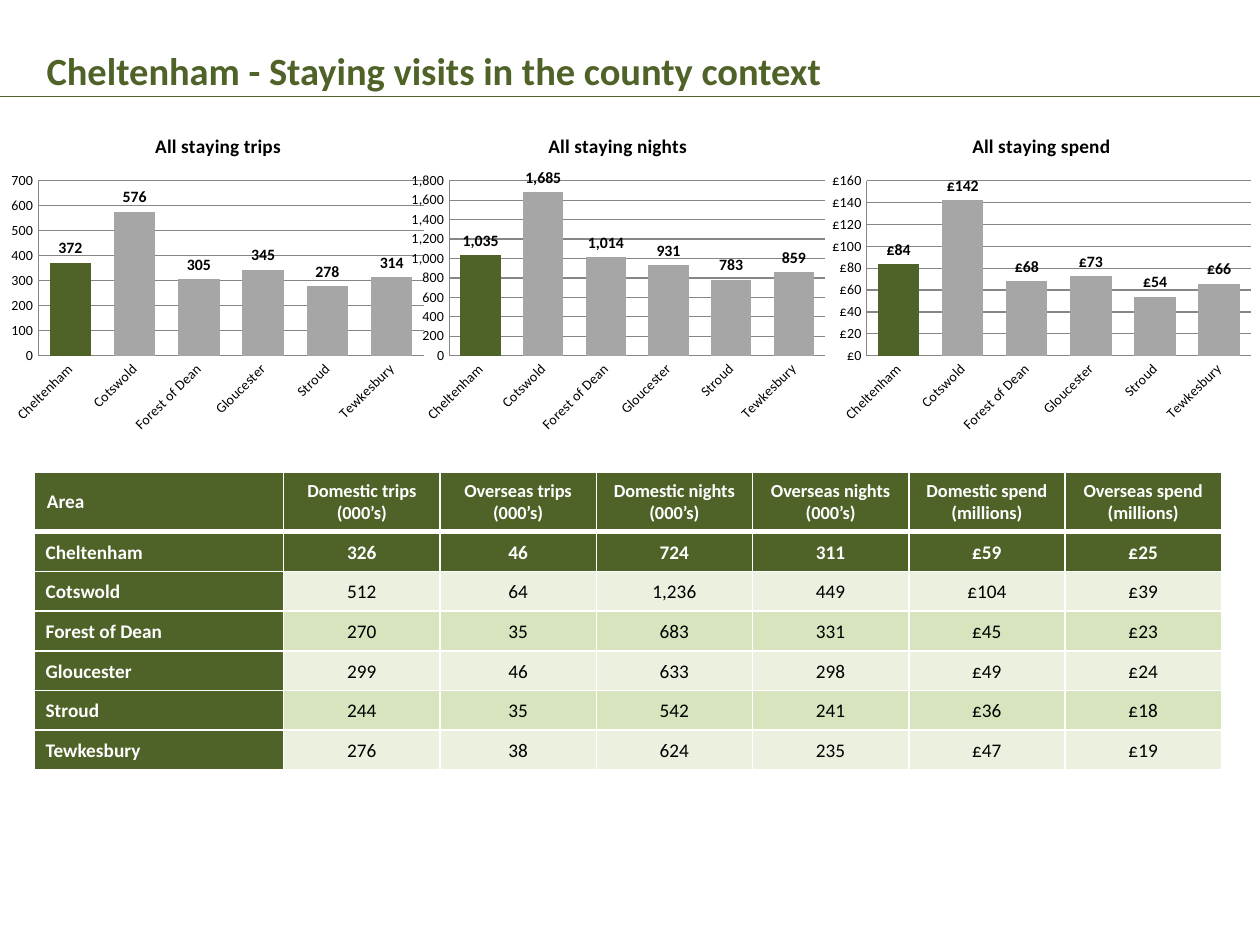
import dataclasses

import lxml.etree
import pptx
import pptx.chart.data
import pptx.dml.color
import pptx.enum.chart
import pptx.enum.shapes
import pptx.enum.text
import pptx.oxml
import pptx.oxml.ns
import pptx.util

Cm = pptx.util.Cm
Pt = pptx.util.Pt
qn = pptx.oxml.ns.qn


@dataclasses.dataclass(frozen=True)
class Theme:
    font: str = "Calibri"
    green: str = "4F6228"
    pale: str = "EBF1DE"
    mid: str = "D7E4BD"
    grey: str = "A6A6A6"
    rule: str = "868686"
    white: str = "FFFFFF"
    black: str = "000000"
    title: float = 22
    body: float = 11
    head: float = 10.5
    label: float = 9
    tick: float = 8


AREAS = ["Cheltenham", "Cotswold", "Forest of Dean",
         "Gloucester", "Stroud", "Tewkesbury"]
HEADS = ["Area", "Domestic trips (000’s)", "Overseas trips (000’s)",
         "Domestic nights\n(000’s)", "Overseas nights\n(000’s)",
         "Domestic spend\n(millions)", "Overseas spend\n(millions)"]
VISITS = [
    ["326", "46", "724", "311", "£59", "£25"],
    ["512", "64", "1,236", "449", "£104", "£39"],
    ["270", "35", "683", "331", "£45", "£23"],
    ["299", "46", "633", "298", "£49", "£24"],
    ["244", "35", "542", "241", "£36", "£18"],
    ["276", "38", "624", "235", "£47", "£19"],
]
# title, values, number format, axis top, axis step, left, width, plot x, plot w
CHARTS = [
    ("All staying trips", [372, 576, 305, 345, 279 - 1, 314], "0",
     700, 100, 0.08, 8.64, 0.08, 0.9),
    ("All staying nights", [1035, 1685, 1014, 931, 783, 859], "#,##0",
     1800, 200, 8.1, 8.71, 0.11, 0.87),
    ("All staying spend", [84, 142, 68, 73, 54, 66], '"£"#,##0',
     160, 20, 16.59, 8.81, 0.1, 0.88),
]
CHARTS[0][1][4] = 278


def rgb(code):
    return pptx.dml.color.RGBColor.from_string(code)


class Deck:
    def __init__(self, theme):
        self.theme = theme
        self.file = pptx.Presentation()
        self.file.slide_width, self.file.slide_height = Cm(25.4), Cm(19.05)
        self.slide = self.file.slides.add_slide(self.file.slide_layouts[6])

    def style(self, font, size, color, bold=False):
        font.name, font.size, font.bold = self.theme.font, Pt(size), bold
        font.color.rgb = rgb(color)

    def title(self, text, left, top, width, height):
        box = self.slide.shapes.add_textbox(Cm(left), Cm(top), Cm(width), Cm(height))
        frame = box.text_frame
        frame.word_wrap = True
        frame.text = text
        para = frame.paragraphs[0]
        para.line_spacing = 1.2
        self.style(para.runs[0].font, self.theme.title, self.theme.green, True)

    def rule(self, top):
        line = self.slide.shapes.add_connector(
            pptx.enum.shapes.MSO_CONNECTOR.STRAIGHT,
            0, Cm(top), self.file.slide_width, Cm(top))
        line.line.color.rgb = rgb(self.theme.green)
        line.line.width = Pt(0.75)
        lxml.etree.SubElement(line.element.spPr, qn("a:effectLst"))

    def border(self, cell, row):
        """White cell edges, thicker between the header and the body."""
        props = cell._tc.get_or_add_tcPr()
        for side in "LRTB":
            thick = (row, side) in ((0, "B"), (1, "T"))
            edge = lxml.etree.SubElement(
                props, qn(f"a:ln{side}"), w=str(Pt(3 if thick else 1)))
            fill = lxml.etree.SubElement(edge, qn("a:solidFill"))
            lxml.etree.SubElement(fill, qn("a:srgbClr"), val=self.theme.white)

    def cell(self, cell, text, row, col):
        look = self.theme
        strong = row < 2 or col == 0
        self.border(cell, row)
        cell.fill.solid()
        cell.fill.fore_color.rgb = rgb(
            look.green if strong else (look.pale, look.mid)[row % 2])
        cell.vertical_anchor = pptx.enum.text.MSO_ANCHOR.MIDDLE
        if row:
            cell.margin_left = Cm(0.03 if col else 0.23)
            cell.margin_top = cell.margin_right = Cm(0.03)
            cell.margin_bottom = 0
        cell.text_frame.text = text
        size = look.head if row == 0 and col else look.body
        for para in cell.text_frame.paragraphs:
            if col:
                para.alignment = pptx.enum.text.PP_ALIGN.CENTER
            self.style(para.runs[0].font, size,
                       look.white if strong else look.black, strong)

    def table(self, rows, left, top, widths, heights):
        grid = self.slide.shapes.add_table(
            len(rows), len(widths), Cm(left), Cm(top),
            Cm(sum(widths)), Cm(sum(heights))).table
        for col, width in zip(grid.columns, widths):
            col.width = Cm(width)
        for line, height in zip(grid.rows, heights):
            line.height = Cm(height)
        for r, texts in enumerate(rows):
            for c, text in enumerate(texts):
                self.cell(grid.cell(r, c), text, r, c)

    def axis(self, axis):
        axis.major_tick_mark = pptx.enum.chart.XL_TICK_MARK.NONE
        axis.minor_tick_mark = pptx.enum.chart.XL_TICK_MARK.NONE
        axis.format.line.color.rgb = rgb(self.theme.rule)
        self.style(axis.tick_labels.font, self.theme.tick, self.theme.black)

    def place(self, chart, **parts):
        """Fix the inner plot area as shares of the chart, and slant the areas."""
        root = chart.element
        plot = root.find(".//" + qn("c:plotArea"))
        for old in plot.findall(qn("c:layout")):
            plot.remove(old)
        layout = lxml.etree.Element(qn("c:layout"))
        plot.insert(0, layout)
        manual = lxml.etree.SubElement(layout, qn("c:manualLayout"))
        values = {"layoutTarget": "inner", "xMode": "edge", "yMode": "edge", **parts}
        for name, value in values.items():
            lxml.etree.SubElement(manual, qn(f"c:{name}"), val=str(value))
        body = plot.find(f"{qn('c:catAx')}/{qn('c:txPr')}/{qn('a:bodyPr')}")
        body.set("rot", "-2700000")
        body.set("vert", "horz")

    def chart(self, name, values, form, peak, step, left, width, x, w):
        look = self.theme
        data = pptx.chart.data.CategoryChartData(number_format=form)
        data.categories = AREAS
        data.add_series("Series 1", values)
        chart = self.slide.shapes.add_chart(
            pptx.enum.chart.XL_CHART_TYPE.COLUMN_CLUSTERED,
            Cm(left), Cm(2.34), Cm(width), Cm(6.53), data).chart
        self.style(chart.font, 18, look.black)
        chart.has_legend = False
        chart.has_title = True
        chart.chart_title.include_in_layout = False
        frame = chart.chart_title.text_frame
        frame.text = name
        self.style(frame.paragraphs[0].runs[0].font, look.body, look.black, True)

        self.axis(chart.category_axis)
        scale = chart.value_axis
        self.axis(scale)
        scale.minimum_scale, scale.maximum_scale, scale.major_unit = 0, peak, step
        scale.tick_labels.number_format = form
        scale.tick_labels.number_format_is_linked = False
        scale.major_gridlines.format.line.color.rgb = rgb(look.rule)

        plot = chart.plots[0]
        plot.gap_width = 55
        plot.vary_by_categories = False
        bars = plot.series[0]
        for item, color in ((bars, look.grey), (bars.points[0], look.green)):
            item.format.fill.solid()
            item.format.fill.fore_color.rgb = rgb(color)
        labels = bars.data_labels
        labels.show_value = True
        labels.number_format = form
        labels.number_format_is_linked = False
        labels.position = pptx.enum.chart.XL_LABEL_POSITION.OUTSIDE_END
        self.style(labels.font, look.label, look.black, True)
        self.place(chart, x=x, y=0.2, w=w, h=0.54)


def main():
    deck = Deck(Theme())
    deck.title("Cheltenham - Staying visits in the county context",
               0.69, 0.64, 24.2, 1.39)
    deck.rule(1.95)
    rows = [HEADS] + [[area, *line] for area, line in zip(AREAS, VISITS)]
    deck.table(rows, 0.69, 9.53, [5.03] + [3.15] * 6, [1.19] + [0.8] * 6)
    for spec in CHARTS:
        deck.chart(*spec)
    deck.file.save("out.pptx")


if __name__ == "__main__":
    main()
